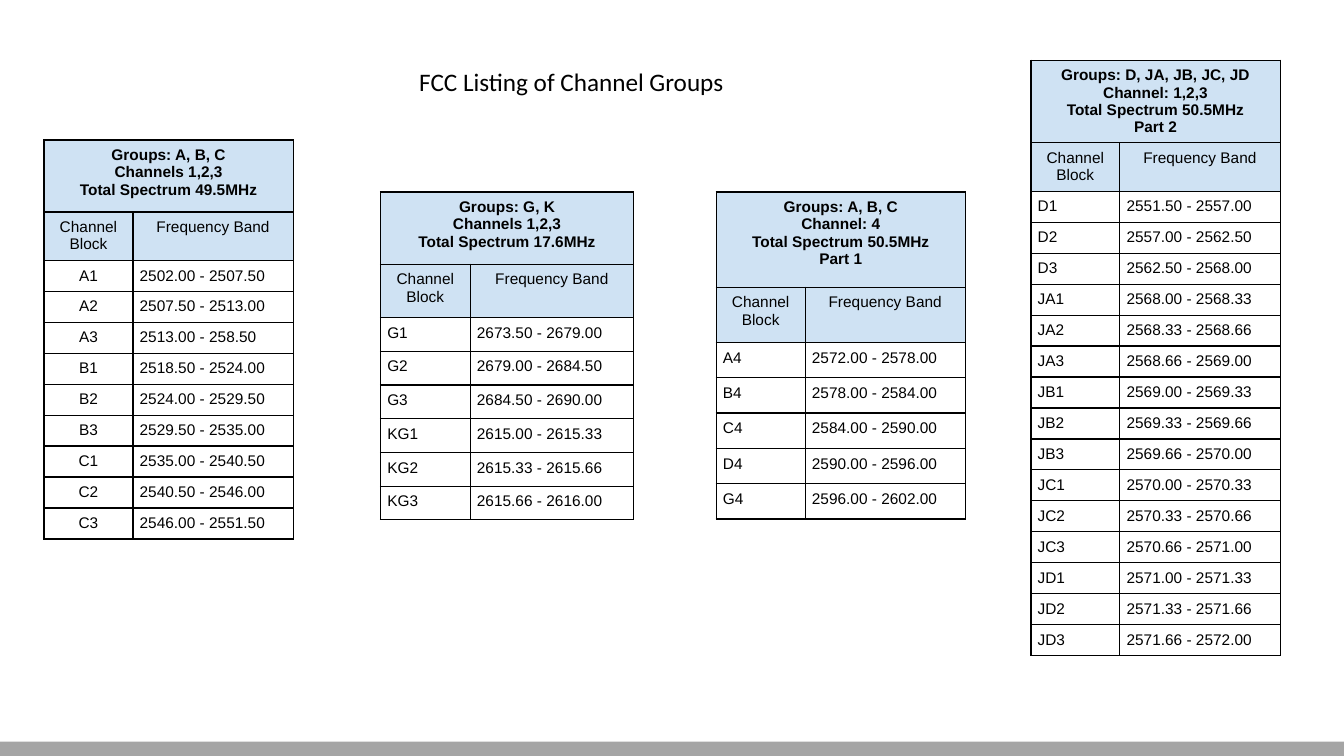
from lxml import etree
from pptx import Presentation
from pptx import util as u
from pptx.dml.color import RGBColor
from pptx.enum import shapes, text
from pptx.oxml.ns import qn

BLACK = RGBColor(0x00, 0x00, 0x00)
HEADER_BLUE = RGBColor(0xCF, 0xE2, 0xF3)
BAR_GREY = RGBColor(0xA5, 0xA5, 0xA5)
CENTER, LEFT = text.PP_ALIGN.CENTER, text.PP_ALIGN.LEFT


def add_borders(cell):
    properties = cell._tc.get_or_add_tcPr()
    for index, side in enumerate(("a:lnL", "a:lnR", "a:lnT", "a:lnB")):
        line = etree.Element(qn(side), w=str(u.Pt(1)))
        fill = etree.SubElement(line, qn("a:solidFill"))
        etree.SubElement(fill, qn("a:srgbClr"), val=str(BLACK))
        properties.insert(index, line)


def write_cell(cell, lines, alignment, header=False, bold=False):
    cell.margin_left = cell.margin_right = u.Cm(0.17)
    cell.margin_top = cell.margin_bottom = u.Cm(0.17)
    if header:
        cell.fill.solid()
        cell.fill.fore_color.rgb = HEADER_BLUE
    else:
        cell.fill.background()
    for index, line in enumerate(lines):
        frame = cell.text_frame
        paragraph = frame.add_paragraph() if index else frame.paragraphs[0]
        paragraph.alignment = alignment
        run = paragraph.add_run()
        run.text = line
        run.font.name = "Arial"
        run.font.size = u.Pt(11)
        run.font.bold = bold
        run.font.color.rgb = BLACK


presentation = Presentation()
presentation.slide_width = u.Cm(33.87)
presentation.slide_height = u.Cm(19.05)
slide = presentation.slides.add_slide(presentation.slide_layouts[6])

# Bottom bar
bar = slide.shapes.add_shape(
    shapes.MSO_SHAPE.RECTANGLE, 0, u.Cm(18.69), presentation.slide_width, u.Cm(0.36))
bar.shadow.inherit = False
bar.fill.solid()
bar.fill.fore_color.rgb = BAR_GREY
bar.line.fill.background()

# Channel groups: left, top, column widths, heights of title, header and
# body rows (all in cm), block alignment, title lines, channel blocks
groups = [
    (1.11, 3.53, (2.24, 4.04), (1.81, 1.22, 0.78), CENTER,
     ["Groups: A, B, C", "Channels 1,2,3", "Total Spectrum 49.5MHz"],
     [("A1", "2502.00 - 2507.50"), ("A2", "2507.50 - 2513.00"),
      ("A3", "2513.00 - 258.50"), ("B1", "2518.50 - 2524.00"),
      ("B2", "2524.00 - 2529.50"), ("B3", "2529.50 - 2535.00"),
      ("C1", "2535.00 - 2540.50"), ("C2", "2540.50 - 2546.00"),
      ("C3", "2546.00 - 2551.50")]),
    (9.59, 4.84, (2.26, 4.12), (1.82, 1.34, 0.85), LEFT,
     ["Groups: G, K", "Channels 1,2,3", "Total Spectrum 17.6MHz"],
     [("G1", "2673.50 - 2679.00"), ("G2", "2679.00 - 2684.50"),
      ("G3", "2684.50 - 2690.00"), ("KG1", "2615.00 - 2615.33"),
      ("KG2", "2615.33 - 2615.66"), ("KG3", "2615.66 - 2616.00")]),
    (18.05, 4.84, (2.24, 4.04), (2.4, 1.39, 0.89), LEFT,
     ["Groups: A, B, C", "Channel: 4", "Total Spectrum 50.5MHz", "Part 1"],
     [("A4", "2572.00 - 2578.00"), ("B4", "2578.00 - 2584.00"),
      ("C4", "2584.00 - 2590.00"), ("D4", "2590.00 - 2596.00"),
      ("G4", "2596.00 - 2602.00")]),
    (25.98, 1.52, (2.24, 4.04), (2.08, 1.22, 0.78), LEFT,
     ["Groups: D, JA, JB, JC, JD Channel: 1,2,3", "Total Spectrum 50.5MHz", "Part 2"],
     [("D1", "2551.50 - 2557.00"), ("D2", "2557.00 - 2562.50"),
      ("D3", "2562.50 - 2568.00"), ("JA1", "2568.00 - 2568.33"),
      ("JA2", "2568.33 - 2568.66"), ("JA3", "2568.66 - 2569.00"),
      ("JB1", "2569.00 - 2569.33"), ("JB2", "2569.33 - 2569.66"),
      ("JB3", "2569.66 - 2570.00"), ("JC1", "2570.00 - 2570.33"),
      ("JC2", "2570.33 - 2570.66"), ("JC3", "2570.66 - 2571.00"),
      ("JD1", "2571.00 - 2571.33"), ("JD2", "2571.33 - 2571.66"),
      ("JD3", "2571.66 - 2572.00")]),
]

# Channel tables
for left, top, widths, heights, block_alignment, title_lines, blocks in groups:
    title_height, header_height, body_height = heights
    row_heights = [title_height, header_height] + [body_height] * len(blocks)
    table = slide.shapes.add_table(
        len(row_heights), 2, u.Cm(left), u.Cm(top),
        u.Cm(sum(widths)), u.Cm(sum(row_heights))).table
    table.first_row = False
    table.horz_banding = False
    for column, width in zip(table.columns, widths):
        column.width = u.Cm(width)
    for row, height in zip(table.rows, row_heights):
        row.height = u.Cm(height)

    table.cell(0, 0).merge(table.cell(0, 1))
    write_cell(table.cell(0, 0), title_lines, CENTER, header=True, bold=True)
    for column, label in enumerate(("Channel Block", "Frequency Band")):
        write_cell(table.cell(1, column), [label], CENTER, header=True)
    for row, (block, band) in enumerate(blocks, start=2):
        write_cell(table.cell(row, 0), [block], block_alignment)
        write_cell(table.cell(row, 1), [band], LEFT)
    for cell in table.iter_cells():
        add_borders(cell)

# Slide title
title = slide.shapes.add_textbox(u.Cm(4.47), u.Cm(1.42), u.Cm(19.86), u.Cm(1.65))
frame = title.text_frame
frame.word_wrap = True
frame.margin_left = frame.margin_right = u.Cm(0.25)
frame.margin_top = frame.margin_bottom = u.Cm(0.25)
paragraph = frame.paragraphs[0]
paragraph.alignment = CENTER
run = paragraph.add_run()
run.text = "FCC Listing of Channel Groups"
run.font.name = "Calibri"
run.font.size = u.Pt(18)
run.font.color.rgb = BLACK

presentation.save("out.pptx")
